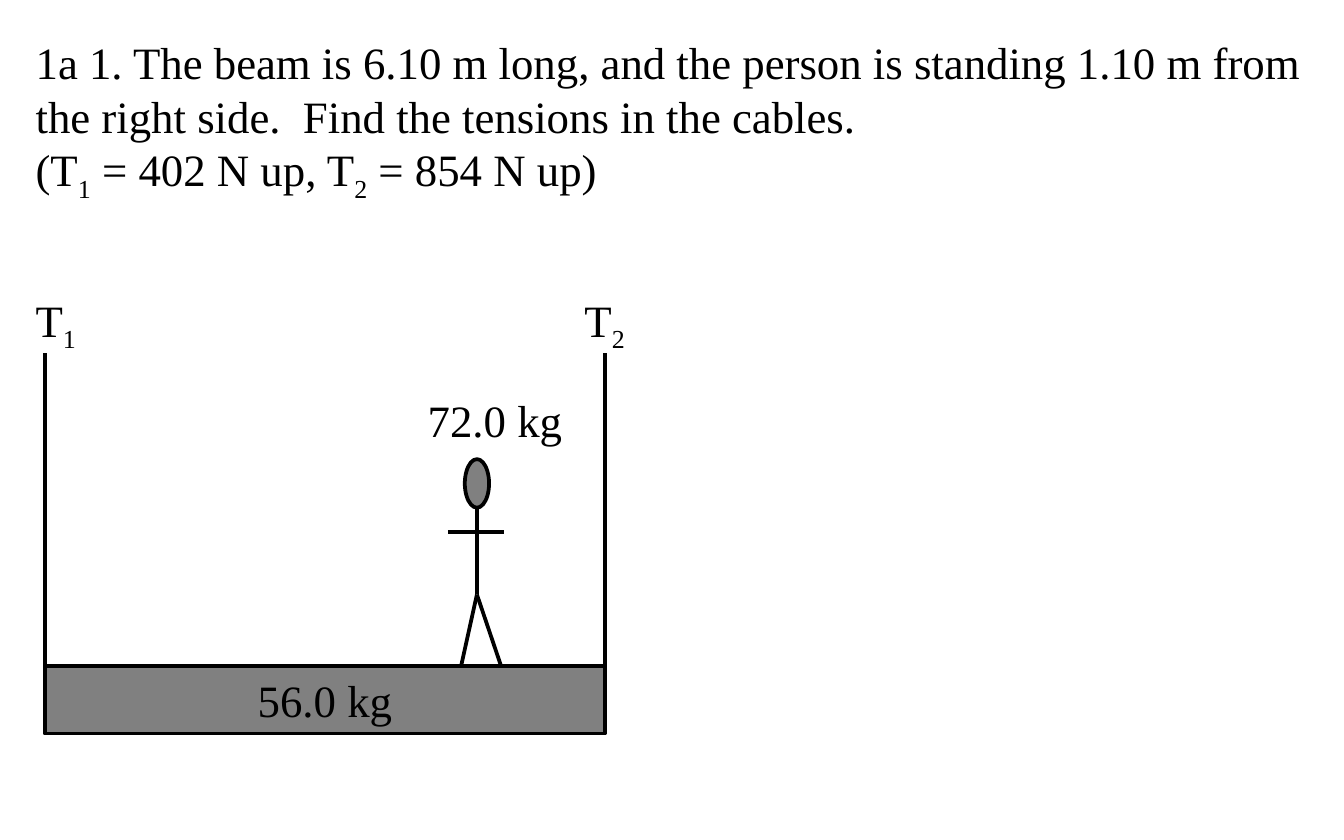
from dataclasses import dataclass
from typing import NamedTuple

from lxml import etree
from pptx import Presentation
from pptx.dml.color import RGBColor
from pptx.enum import shapes, text
from pptx.oxml.ns import qn
from pptx.util import Pt


@dataclass(frozen=True)
class Theme:
    font: str = "Times New Roman"
    size: float = 24
    line_width: float = 2
    ink: RGBColor = RGBColor(0, 0, 0)
    fill: RGBColor = RGBColor(0x80, 0x80, 0x80)
    subscript: str = "-25000"


class Box(NamedTuple):
    left: float
    top: float
    width: float
    height: float


class Line(NamedTuple):
    x1: float
    y1: float
    x2: float
    y2: float


class Run(NamedTuple):
    text: str
    sub: bool = False


class Label(NamedTuple):
    box: Box
    runs: list[Run]


THEME = Theme()
BEAM = Box(24, 357, 300, 36)
BEAM_RIGHT = BEAM.left + BEAM.width
CABLE_TOP = 189
BODY_X, NECK_Y, ARM_Y, HIP_Y = 255.5, 272, 285, 318.5
HEAD = Box(BODY_X - 6.5, NECK_Y - 26, 13, 26)

CABLES = [Line(x, BEAM.top, x, CABLE_TOP) for x in (BEAM.left, BEAM_RIGHT)]
LEGS = [Line(x, BEAM.top, BODY_X, HIP_Y) for x in (247, 268.5)]
BODY = Line(BODY_X, HIP_Y, BODY_X, NECK_Y)
ARMS = Line(240, ARM_Y, 270, ARM_Y)

PROBLEM = Box(12, 15, 696, 94.5)
PROBLEM_TEXT = [
    [Run("1a 1. The beam is 6.10 m long, and the person is standing 1.10 m from "
         "the right side.  Find the tensions in the cables.")],
    [Run("(T"), Run("1", True), Run(" = 402 N up, T"), Run("2", True),
     Run(" = 854 N up)")],
]
LABELS = [
    Label(Box(222, 207, 87, 36), [Run("72.0 kg")]),
    Label(Box(12, 153, 37.5, 36), [Run("T"), Run("1", True)]),
    Label(Box(306, 153, 37.5, 36), [Run("T"), Run("2", True)]),
]


def add_runs(p, runs: list[Run]) -> None:
    for run in runs:
        r = p.add_run()
        r.text = run.text
        r.font.name = THEME.font
        r.font.size = Pt(THEME.size)
        r.font.color.rgb = THEME.ink
        if run.sub:
            r.font._element.set("baseline", THEME.subscript)


def add_text(parent, box: Box, paragraphs: list[list[Run]], wrap: bool = False) -> None:
    tf = parent.add_textbox(*map(Pt, box)).text_frame
    tf.word_wrap = wrap
    tf.auto_size = text.MSO_AUTO_SIZE.SHAPE_TO_FIT_TEXT
    for i, runs in enumerate(paragraphs):
        add_runs(tf.add_paragraph() if i else tf.paragraphs[0], runs)


def style_line(line) -> None:
    line.color.rgb = THEME.ink
    line.width = Pt(THEME.line_width)


def add_solid(parent, kind: shapes.MSO_SHAPE, box: Box):
    """Add a grey shape with a black outline."""
    sp = parent.add_shape(kind, *map(Pt, box))
    sp.shadow.inherit = False
    sp.fill.solid()
    sp.fill.fore_color.rgb = THEME.fill
    style_line(sp.line)
    return sp


def add_line(parent, line: Line) -> None:
    sp = parent.add_connector(shapes.MSO_CONNECTOR.STRAIGHT, *map(Pt, line))
    style_line(sp.line)
    etree.SubElement(sp._element.spPr, qn("a:effectLst"))


def add_diagram(parent) -> None:
    beam = add_solid(parent, shapes.MSO_SHAPE.RECTANGLE, BEAM)
    tf = beam.text_frame
    tf.vertical_anchor = text.MSO_ANCHOR.MIDDLE
    p = tf.paragraphs[0]
    p.alignment = text.PP_ALIGN.CENTER
    add_runs(p, [Run("56.0 kg")])

    for line in [*CABLES, *LEGS, BODY]:
        add_line(parent, line)
    add_solid(parent, shapes.MSO_SHAPE.OVAL, HEAD)
    add_line(parent, ARMS)
    for label in LABELS:
        add_text(parent, label.box, [label.runs])


def main() -> None:
    prs = Presentation()
    prs.slide_width, prs.slide_height = Pt(720), Pt(450)
    s = prs.slides.add_slide(prs.slide_layouts[6])
    add_text(s.shapes, PROBLEM, PROBLEM_TEXT, wrap=True)
    add_diagram(s.shapes.add_group_shape().shapes)
    prs.save("out.pptx")


if __name__ == "__main__":
    main()
